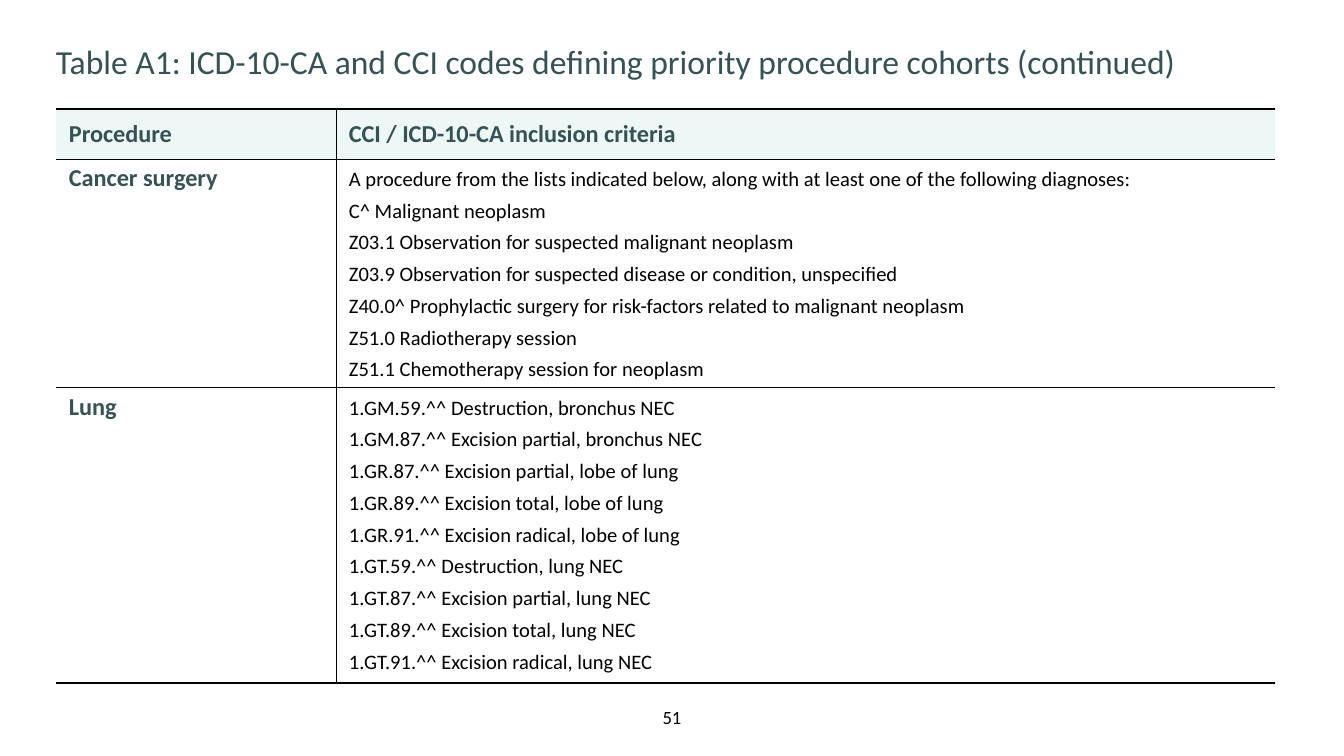
import lxml.etree
import pptx
import pptx.dml.color
import pptx.enum.text
import pptx.oxml.ns
import pptx.util

PX = 914400 / 134.4
FONT = "Calibri"
TEAL = pptx.dml.color.RGBColor(0x36, 0x52, 0x54)
MINT = pptx.dml.color.RGBColor(0xED, 0xF7, 0xF5)
WHITE = pptx.dml.color.RGBColor(0xFF, 0xFF, 0xFF)
BLACK = pptx.dml.color.RGBColor(0x00, 0x00, 0x00)
THIN, THICK = 0.5, 1

COLUMN_WIDTHS = [280, 939]
ROW_HEIGHTS = [50, 229, 295]
ROWS = [
    ("Procedure", ["CCI / ICD-10-CA inclusion criteria"]),
    ("Cancer surgery", [
        "A procedure from the lists indicated below, along with at least one of the following diagnoses:",
        "C^ Malignant neoplasm",
        "Z03.1 Observation for suspected malignant neoplasm",
        "Z03.9 Observation for suspected disease or condition, unspecified",
        "Z40.0^ Prophylactic surgery for risk-factors related to malignant neoplasm",
        "Z51.0 Radiotherapy session",
        "Z51.1 Chemotherapy session for neoplasm",
    ]),
    ("Lung", [
        "1.GM.59.^^ Destruction, bronchus NEC",
        "1.GM.87.^^ Excision partial, bronchus NEC",
        "1.GR.87.^^ Excision partial, lobe of lung",
        "1.GR.89.^^ Excision total, lobe of lung",
        "1.GR.91.^^ Excision radical, lobe of lung",
        "1.GT.59.^^ Destruction, lung NEC",
        "1.GT.87.^^ Excision partial, lung NEC",
        "1.GT.89.^^ Excision total, lung NEC",
        "1.GT.91.^^ Excision radical, lung NEC",
    ]),
]


def px(length):
    """Turn px into EMU."""
    return pptx.util.Emu(round(length * PX))


def style_runs(paragraph, size, color, bold=False):
    """Format every run of a paragraph."""
    for run in paragraph.runs:
        run.font.name = FONT
        run.font.size = pptx.util.Pt(size)
        run.font.bold = bold
        run.font.color.rgb = color


def clear_insets(frame):
    """Remove the inner margins of a text frame and anchor it to the top."""
    frame.margin_left = frame.margin_right = frame.margin_top = frame.margin_bottom = 0
    frame.word_wrap = True
    frame.vertical_anchor = pptx.enum.text.MSO_ANCHOR.TOP


def add_border(cell, side, width):
    """Add one black cell edge, or a hidden one when the width is zero."""
    qn = pptx.oxml.ns.qn
    edge = lxml.etree.SubElement(cell._tc.get_or_add_tcPr(), qn(f"a:ln{side}"))
    edge.set("w", str(pptx.util.Pt(width)))
    if width:
        fill = lxml.etree.SubElement(edge, qn("a:solidFill"))
        lxml.etree.SubElement(fill, qn("a:srgbClr")).set("val", str(BLACK))
    else:
        lxml.etree.SubElement(edge, qn("a:noFill"))


def fill_cell(cell, lines, is_heading):
    """Write a cell as a bold heading or as a list of codes."""
    cell.margin_left = cell.margin_right = px(13)
    cell.margin_top = cell.margin_bottom = px(5)
    cell.text_frame.text = "\n".join(lines)
    for position, paragraph in enumerate(cell.text_frame.paragraphs):
        if is_heading:
            style_runs(paragraph, 13, TEAL, True)
        else:
            paragraph.line_spacing = pptx.util.Pt(15)
            paragraph.space_before = pptx.util.Pt(2 if position else 0)
            style_runs(paragraph, 11, BLACK)


def add_title(slide, left, top, width, height):
    """Place the slide title."""
    title = slide.shapes.title
    title.left, title.top, title.width, title.height = map(px, (left, top, width, height))
    frame = title.text_frame
    clear_insets(frame)
    frame.text = "Table A1: ICD-10-CA and CCI codes defining priority procedure cohorts (continued)"
    heading = frame.paragraphs[0]
    heading.alignment = pptx.enum.text.PP_ALIGN.LEFT
    heading.line_spacing = pptx.util.Pt(33)
    style_runs(heading, 18, TEAL)


def add_code_table(slide, left, top):
    """Place the table of procedures and their inclusion criteria."""
    box = map(px, (left, top, sum(COLUMN_WIDTHS), sum(ROW_HEIGHTS)))
    codes = slide.shapes.add_table(len(ROWS), len(COLUMN_WIDTHS), *box).table
    codes.first_row = codes.horz_banding = False
    for column, width in zip(codes.columns, COLUMN_WIDTHS):
        column.width = px(width)
    for row, height in zip(codes.rows, ROW_HEIGHTS):
        row.height = px(height)

    for r, (procedure, criteria) in enumerate(ROWS):
        is_header, is_last = r == 0, r == len(ROWS) - 1
        for c, lines in enumerate(([procedure], criteria)):
            cell = codes.cell(r, c)
            add_border(cell, "L", THIN if c else 0)
            add_border(cell, "R", 0 if c else THIN)
            add_border(cell, "T", THICK if is_header else THIN)
            add_border(cell, "B", THICK if is_last else THIN)
            cell.fill.solid()
            cell.fill.fore_color.rgb = MINT if is_header else WHITE
            anchor = pptx.enum.text.MSO_ANCHOR
            cell.vertical_anchor = anchor.MIDDLE if is_header else anchor.TOP
            fill_cell(cell, lines, is_header or c == 0)


def add_page_number(slide, left, top, width, height):
    """Place the centred page number."""
    frame = slide.shapes.add_textbox(*map(px, (left, top, width, height))).text_frame
    clear_insets(frame)
    frame.vertical_anchor = pptx.enum.text.MSO_ANCHOR.MIDDLE
    frame.text = "51"
    frame.paragraphs[0].alignment = pptx.enum.text.PP_ALIGN.CENTER
    style_runs(frame.paragraphs[0], 10, BLACK)


def main():
    """Build and save the slide."""
    deck = pptx.Presentation()
    deck.slide_width, deck.slide_height = px(1344), px(756)
    slide = deck.slides.add_slide(deck.slide_layouts[5])
    add_page_number(slide, 630, 706, 84, 23)
    add_title(slide, 56, 20, 1210, 59)
    add_code_table(slide, 56, 109)
    deck.save("out.pptx")


if __name__ == "__main__":
    main()
